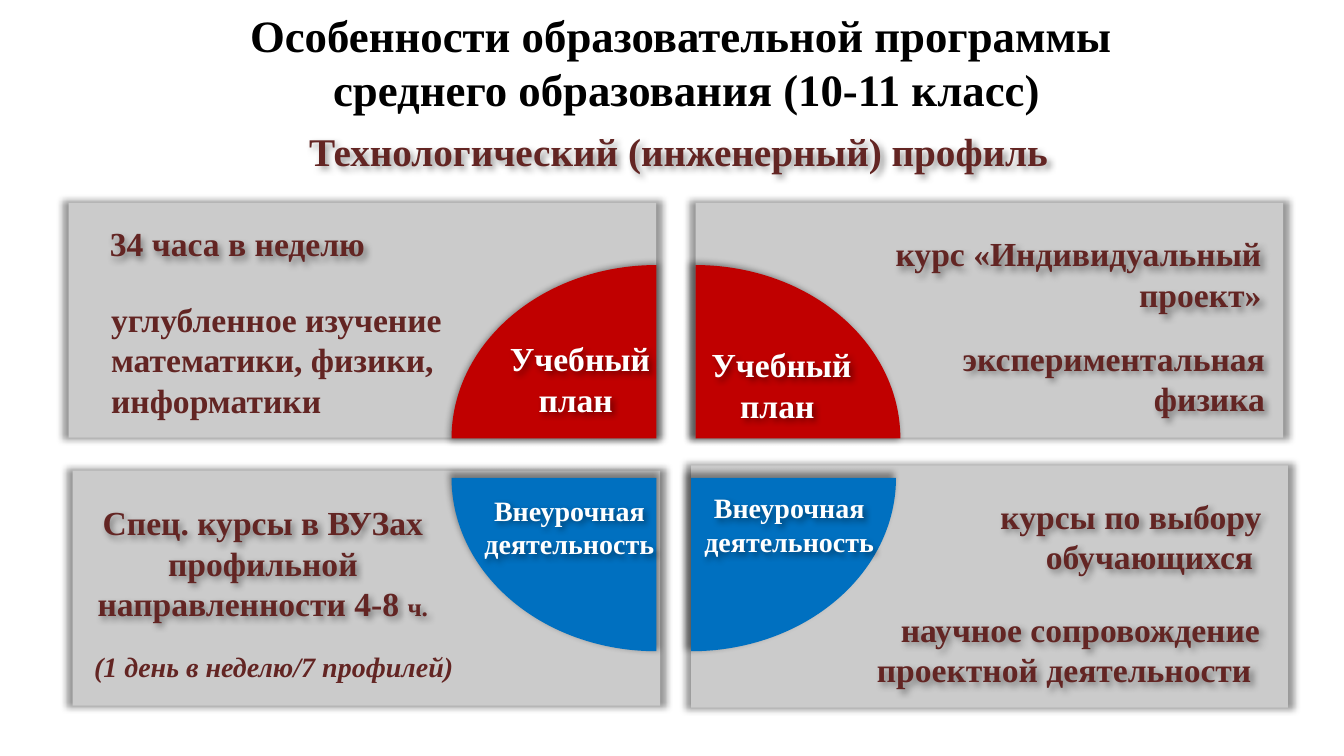
from typing import NamedTuple

import pptx
import pptx.dml.color
import pptx.enum.shapes
import pptx.enum.text
import pptx.oxml.ns
import pptx.util
from lxml import etree
from pptx.util import Cm

RGBColor = pptx.dml.color.RGBColor
PP_ALIGN = pptx.enum.text.PP_ALIGN
MSO_SHAPE = pptx.enum.shapes.MSO_SHAPE

BLACK = RGBColor(0x00, 0x00, 0x00)
WHITE = RGBColor(0xFF, 0xFF, 0xFF)
GREY = RGBColor(0xCB, 0xCB, 0xCB)
RED = RGBColor(0xC0, 0x00, 0x00)
BLUE = RGBColor(0x00, 0x70, 0xC0)
BROWN = RGBColor(0x63, 0x25, 0x23)

FONT = "Times New Roman"
QUARTER_WIDTH, QUARTER_HEIGHT = 5.16, 4.37


class Panel(NamedTuple):
    left: float
    top: float
    width: float
    height: float


class Quarter(NamedTuple):
    """Quarter ellipse, placed by the left and top of its visible area."""
    left: float
    top: float
    rotation: int
    color: RGBColor


class Caption(NamedTuple):
    text: str
    left: float
    top: float
    width: float
    height: float
    size: int = 24
    color: RGBColor = BROWN
    align: PP_ALIGN = PP_ALIGN.LEFT
    italic: bool = False
    shadow: bool = True
    wrap: bool = True
    suffix: str = ""


PANELS = [
    Panel(1.73, 5.11, 14.81, 5.92),
    Panel(17.53, 5.11, 14.81, 5.92),
    Panel(17.42, 11.73, 15.04, 6.1),
    Panel(1.83, 11.86, 14.81, 5.92),
]

QUARTERS = [
    Quarter(11.38, 6.68, 0, RED),
    Quarter(17.53, 6.68, 90, RED),
    Quarter(11.38, 12.04, 270, BLUE),
    Quarter(17.42, 12.04, 180, BLUE),
]

CENTER, RIGHT = PP_ALIGN.CENTER, PP_ALIGN.RIGHT
CURRICULUM = "Учебный план "
EXTRACURRICULAR = "Внеурочная деятельность"

CAPTIONS = [
    Caption("34 часа в неделю", 2.52, 5.5, 13.79, 1.5),
    Caption("курсы по выбору обучающихся ", 22.49, 12.37, 9.55, 1.45, align=RIGHT),
    Caption(CURRICULUM, 11.91, 8.4, 5.41, 2.01, color=WHITE, align=CENTER),
    Caption("Технологический (инженерный) профиль", 7.54, 3.08, 23.39, 2.13, size=28),
    Caption("экспериментальная физика", 22.94, 8.38, 9.19, 2.24, align=RIGHT),
    Caption(EXTRACURRICULAR, 11.39, 12.3, 5.92, 1.78, size=20, color=WHITE, align=CENTER),
    Caption("курс «Индивидуальный проект»", 21.58, 5.75, 10.46, 1.9, align=RIGHT),
    Caption("Спец. курсы в ВУЗах профильной направленности 4-8 ",
            1.86, 12.53, 9.53, 3.45, align=CENTER, suffix="ч."),
    Caption(CURRICULUM, 16.99, 8.55, 5.41, 2.01, color=WHITE, align=CENTER),
    Caption(EXTRACURRICULAR, 16.93, 12.24, 5.92, 1.78, size=20, color=WHITE, align=CENTER),
    Caption("углубленное изучение математики, физики, информатики",
            2.55, 7.41, 9.04, 3.33, shadow=False),
    Caption("научное сопровождение проектной деятельности ",
            21.2, 15.21, 10.8, 1.09, align=RIGHT),
    Caption("(1 день в неделю/7 профилей) ", 2.09, 16.23, 9.8, 1.12, size=20,
            align=CENTER, italic=True, shadow=False, wrap=False),
]


def add_run(paragraph, text: str, *, size: int, color: RGBColor, italic: bool = False) -> None:
    run = paragraph.add_run()
    run.text = text
    run.font.name = FONT
    run.font.size = pptx.util.Pt(size)
    run.font.bold = True
    run.font.italic = italic
    run.font.color.rgb = color


def add_soft_shadow(shape, *, distance: float = 0, scale: int = 100) -> None:
    """Add a blurred black shadow; scale is its size in percent of the shape."""
    shape.shadow.inherit = False
    qn = pptx.oxml.ns.qn
    effects = shape.element.spPr.find(qn("a:effectLst"))
    percent = str(scale * 1000)
    outer = etree.SubElement(effects, qn("a:outerShdw"), blurRad=str(pptx.util.Pt(5)),
                             dist=str(pptx.util.Pt(distance)), dir="2700000",
                             sx=percent, sy=percent, algn="ctr", rotWithShape="0")
    black = etree.SubElement(outer, qn("a:srgbClr"), val=str(BLACK))
    etree.SubElement(black, qn("a:alpha"), val="40000")


def paint(shape, color: RGBColor) -> None:
    shape.fill.solid()
    shape.fill.fore_color.rgb = color
    shape.line.fill.background()
    add_soft_shadow(shape, scale=102)


def draw_panel(slide, panel: Panel) -> None:
    box = slide.shapes.add_shape(MSO_SHAPE.RECTANGLE, *(Cm(length) for length in panel))
    paint(box, GREY)


def draw_quarter(slide, quarter: Quarter) -> None:
    """Swap the frame's sides about its centre when the wedge lies on its side."""
    width, height = QUARTER_WIDTH, QUARTER_HEIGHT
    if quarter.rotation % 180:
        width, height = height, width
    left = quarter.left + (QUARTER_WIDTH - width) / 2
    top = quarter.top + (QUARTER_HEIGHT - height) / 2
    wedge = slide.shapes.add_shape(MSO_SHAPE.PIE_WEDGE, Cm(left), Cm(top),
                                   Cm(width), Cm(height))
    wedge.rotation = quarter.rotation
    paint(wedge, quarter.color)


def draw_caption(slide, caption: Caption) -> None:
    box = slide.shapes.add_textbox(Cm(caption.left), Cm(caption.top),
                                   Cm(caption.width), Cm(caption.height))
    box.text_frame.word_wrap = caption.wrap
    paragraph = box.text_frame.paragraphs[0]
    paragraph.alignment = caption.align
    add_run(paragraph, caption.text, size=caption.size, color=caption.color,
            italic=caption.italic)
    if caption.suffix:
        add_run(paragraph, caption.suffix, size=18, color=caption.color)
    if caption.shadow:
        add_soft_shadow(box, distance=3)


def draw_title(slide) -> None:
    title = slide.shapes.title
    title.left, title.top, title.width, title.height = Cm(1.8), Cm(0.28), Cm(31.01), Cm(2.54)
    title.text_frame.vertical_anchor = pptx.enum.text.MSO_ANCHOR.MIDDLE
    paragraph = title.text_frame.paragraphs[0]
    paragraph.alignment = CENTER
    add_run(paragraph, "Особенности образовательной программы ", size=32, color=BLACK)
    paragraph.add_line_break()
    add_run(paragraph, "среднего образования (10-11 класс)", size=32, color=BLACK)


def main() -> None:
    presentation = pptx.Presentation()
    presentation.slide_width, presentation.slide_height = Cm(33.87), Cm(19.05)
    slide = presentation.slides.add_slide(presentation.slide_layouts[5])
    draw_title(slide)
    for panel in PANELS:
        draw_panel(slide, panel)
    for quarter in QUARTERS:
        draw_quarter(slide, quarter)
    for caption in CAPTIONS:
        draw_caption(slide, caption)
    presentation.save("out.pptx")


if __name__ == "__main__":
    main()
